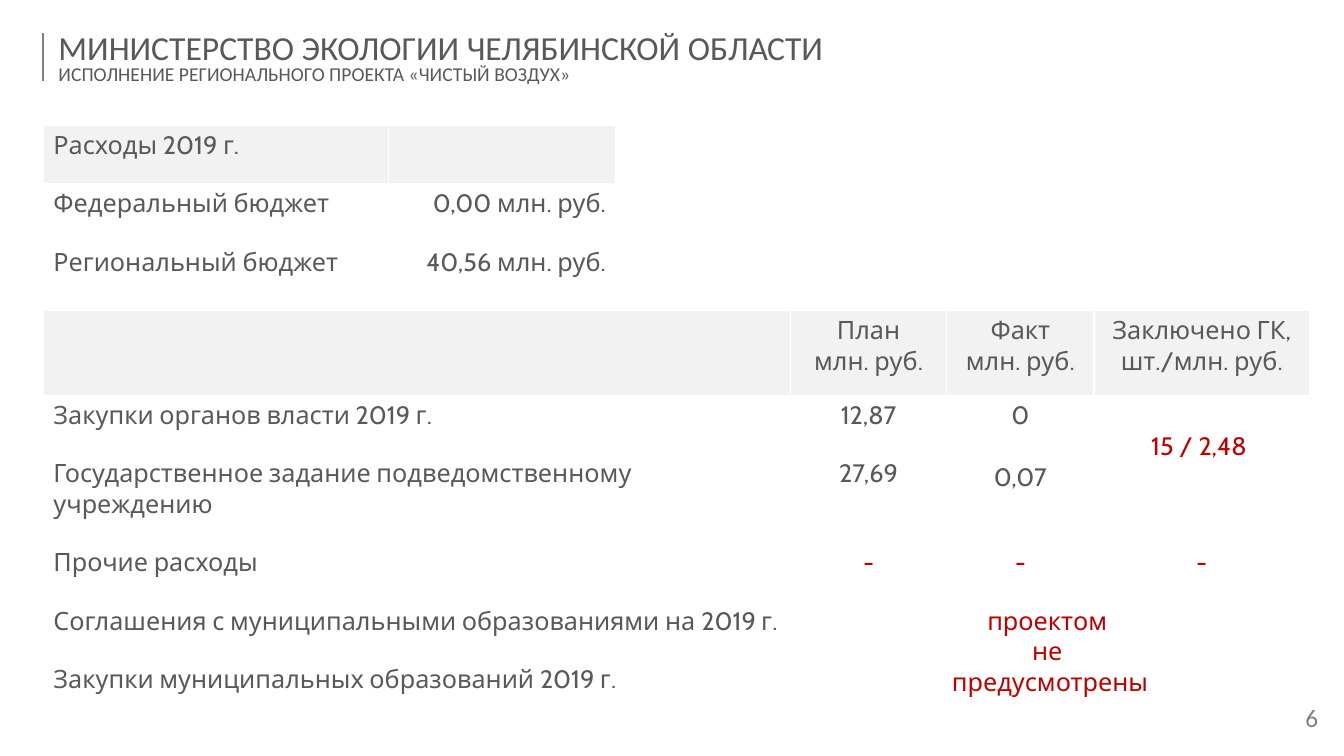
from lxml import etree
from pptx import Presentation
from pptx import util as u
from pptx.dml.color import RGBColor
from pptx.enum import shapes, text
from pptx.oxml import ns

TEXT = RGBColor(0x59, 0x59, 0x59)
RULE = RGBColor(0x80, 0x80, 0x80)
BAND = RGBColor(0xF2, 0xF2, 0xF2)
ALERT = RGBColor(0xC0, 0x00, 0x00)
LEFT, CENTER, RIGHT = (text.PP_ALIGN.LEFT, text.PP_ALIGN.CENTER,
                       text.PP_ALIGN.RIGHT)
LINE = 0.31  # height of one table text line, inches


class Deck:
    """Holds the fonts and the current slide."""
    heading_font = "Calibri"
    table_font = "Cabin"

    def __init__(self, prs):
        self.s = prs.slides.add_slide(prs.slide_layouts[5])

    def fill_text(self, tf, lines, font, align=LEFT, spacing=1.0):
        """Each line is (text, size, colour)."""
        tf.word_wrap = True
        for i, (words, size, color) in enumerate(lines):
            p = tf.paragraphs[0] if i == 0 else tf.add_paragraph()
            for name, value in {"alignment": align, "line_spacing": spacing,
                                "space_before": u.Pt(0)}.items():
                setattr(p, name, value)
            r = p.add_run()
            r.text = words
            for name, value in {"name": font, "size": u.Pt(size),
                                "bold": False}.items():
                setattr(r.font, name, value)
            r.font.color.rgb = color

    def heading(self, sp, box, lines, align=LEFT):
        sp.left, sp.top, sp.width, sp.height = map(u.Inches, box)
        tf = sp.text_frame
        tf.auto_size = text.MSO_AUTO_SIZE.NONE
        tf.vertical_anchor = text.MSO_ANCHOR.MIDDLE
        self.fill_text(tf, lines, self.heading_font, align, 0.8)

    def title(self, box, lines):
        self.heading(self.s.shapes.title, box, lines)

    def page_number(self, box, number):
        sp = self.s.shapes.add_textbox(*map(u.Inches, box))
        self.heading(sp, box, [(number, 18, RULE)], CENTER)

    def rule(self, *ends):
        sp = self.s.shapes.add_connector(shapes.MSO_CONNECTOR.STRAIGHT,
                                         *map(u.Inches, ends))
        sp.line.color.rgb = RULE
        sp.line.width = u.Pt(1.5)
        etree.SubElement(sp._element.spPr, ns.qn("a:effectLst"))

    def table(self, left, top, cols, heights, rows, aligns,
              merges=(), alerts=()):
        box = (left, top, sum(cols), sum(heights))
        tbl = self.s.shapes.add_table(len(rows), len(cols),
                                      *map(u.Inches, box)).table
        tbl.first_row = tbl.horz_banding = False
        for col, width in zip(tbl.columns, cols):
            col.width = u.Inches(width)
        for row, height in zip(tbl.rows, heights):
            row.height = u.Inches(height)
        for r0, c0, r1, c1 in merges:
            tbl.cell(r0, c0).merge(tbl.cell(r1, c1))
        for i, row in enumerate(rows):
            for j, words in enumerate(row):
                cell = tbl.cell(i, j)
                if i == 0:
                    cell.fill.solid()
                    cell.fill.fore_color.rgb = BAND
                else:
                    cell.fill.background()
                if words:
                    color = ALERT if (i, j) in alerts else TEXT
                    self.fill_text(cell.text_frame,
                                   [(w, 18, color) for w in words.split("\n")],
                                   self.table_font, aligns[j])
        return tbl


def main():
    prs = Presentation()
    prs.slide_width, prs.slide_height = u.Inches(13.33), u.Inches(7.5)
    deck = Deck(prs)

    # Heading
    deck.rule(0.43, 0.33, 0.43, 0.8)
    deck.title((0.48, 0.26, 12.5, 0.67), [
        ("МИНИСТЕРСТВО ЭКОЛОГИИ ЧЕЛЯБИНСКОЙ ОБЛАСТИ", 24, TEXT),
        ("ИСПОЛНЕНИЕ РЕГИОНАЛЬНОГО ПРОЕКТА «ЧИСТЫЙ ВОЗДУХ»", 14, TEXT)])

    # Budget sources
    deck.table(0.43, 1.24, [3.42, 2.26], [0.58] * 3, [
        ("Расходы 2019 г.", ""),
        ("Федеральный бюджет", "0,00 млн. руб."),
        ("Региональный бюджет", "40,56 млн. руб.")], [LEFT, RIGHT])

    # Plan and actual spending
    spending = deck.table(
        0.43, 3.08, [7.41, 1.55, 1.46, 2.14],
        [0.84, 0.58, 0.88, 0.58, 0.58, 0.58], [
            ("", "План\nмлн. руб.", "Факт\nмлн. руб.",
             "Заключено ГК,\nшт./млн. руб."),
            ("Закупки органов власти 2019 г.", "12,87", "0\n0,07",
             "15 / 2,48 "),
            ("Государственное задание подведомственному учреждению",
             "27,69", "", ""),
            ("Прочие расходы", "-", "-", "-"),
            ("Соглашения с муниципальными образованиями на 2019 г.",
             "проектом \nне \nпредусмотрены", "", ""),
            ("Закупки муниципальных образований 2019 г.", "", "", "")],
        [LEFT, CENTER, CENTER, CENTER],
        merges=[(1, 2, 2, 2), (1, 3, 2, 3), (4, 1, 5, 3)],
        alerts=[(1, 3), (3, 1), (3, 2), (3, 3), (4, 1)])
    # Values shared by two rows sit one line lower
    spending.cell(1, 2).text_frame.paragraphs[1].space_before = u.Inches(LINE)
    spending.cell(1, 3).margin_top = u.Inches(0.05 + LINE)

    # Page number
    deck.page_number((12.43, 6.9, 1.16, 0.5), "6")
    prs.save("out.pptx")


if __name__ == "__main__":
    main()
